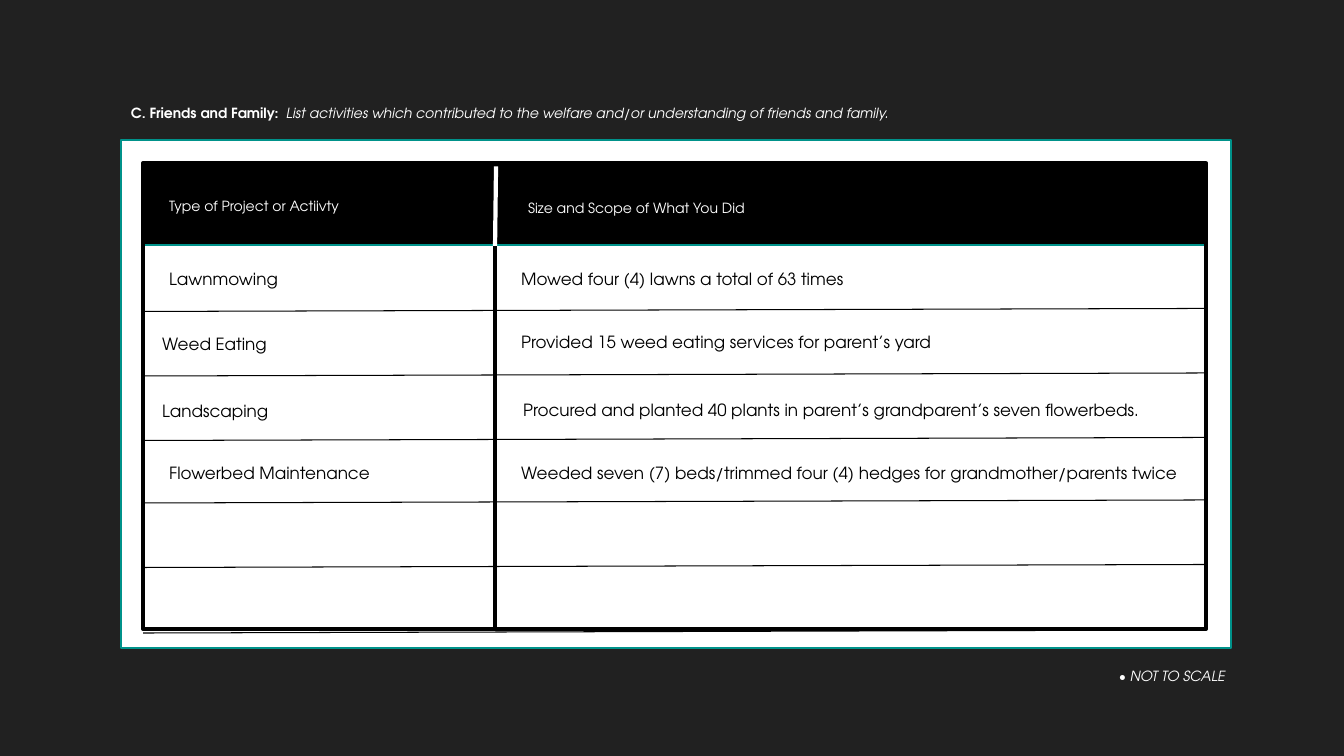
from pptx import Presentation
from pptx.dml.color import RGBColor
from pptx.enum.shapes import MSO_CONNECTOR, MSO_SHAPE
from pptx.oxml.ns import qn
from pptx.util import Inches, Pt
from lxml.etree import SubElement

THEME = {
    "font": "TeX Gyre Adventor",
    "background": "212121", "paper": "FFFFFF", "ink": "000000", "accent": "00928A",
    "small": 10, "body": 12,
    "thin": 0.75, "border": 1.25, "thick": 3,
}

HEADING = [
    ("C. Friends and Family:  ", {"bold": True}),
    ("List activities which contributed to the welfare and/or understanding "
     "of friends and family.", {"italic": True}),
]
FOOTNOTE = [("• NOT TO SCALE", {"italic": True})]

# text, left, top
COLUMN_TITLES = [
    ("Type of Project or Actiivty", 1.58, 1.91),
    ("Size and Scope of What You Did", 5.14, 1.93),
]
# (activity, left, top), (scope, left, top)
ACTIVITIES = [
    (("Lawnmowing", 1.58, 2.62),
     ("Mowed four (4) lawns a total of 63 times", 5.07, 2.62)),
    (("Weed Eating", 1.51, 3.26),
     ("Provided 15 weed eating services for parent’s yard", 5.07, 3.24)),
    (("Landscaping", 1.51, 3.93),
     ("Procured and planted 40 plants in parent’s grandparent’s seven flowerbeds.",
      5.09, 3.92)),
    (("Flowerbed Maintenance", 1.58, 4.54),
     ("Weeded seven (7) beds/trimmed four (4) hedges for grandmother/parents twice",
      5.07, 4.54)),
]
COLUMN_WIDTHS = (3.14, 6.72)

PANEL = (1.2, 1.39, 11.01, 5.04)
GRID_LEFT, GRID_TOP, GRID_WIDTH, GRID_HEIGHT = GRID = (1.42, 1.62, 10.54, 4.62)
HEADER = (GRID_LEFT, GRID_TOP, GRID_WIDTH, 0.81)
ROW_RULES = [3.09, 3.73, 4.37, 4.99, 5.63, 6.28]
RULE_RISE = 0.03
DIVIDER = 4.91


def color(name):
    return RGBColor.from_string(THEME[name])


def add_box(slide, bounds, fill, line, weight):
    shape = slide.shapes.add_shape(MSO_SHAPE.RECTANGLE, *map(Inches, bounds))
    shape.shadow.inherit = False
    if fill:
        shape.fill.solid()
        shape.fill.fore_color.rgb = color(fill)
    else:
        shape.fill.background()
    shape.line.color.rgb = color(line)
    shape.line.width = Pt(THEME[weight])


def add_line(slide, start, end, line, weight):
    connector = slide.shapes.add_connector(
        MSO_CONNECTOR.STRAIGHT, *map(Inches, start + end))
    connector.line.color.rgb = color(line)
    connector.line.width = Pt(THEME[weight])
    SubElement(connector._element.spPr, qn("a:effectLst"))


def add_text(slide, runs, left, top, width, size, ink):
    """Add one line of text; runs pairs each piece with its own font format."""
    height = 0.3 if size == "body" else 0.27
    box = slide.shapes.add_textbox(*map(Inches, (left, top, width, height)))
    box.text_frame.word_wrap = True
    paragraph = box.text_frame.paragraphs[0]
    for text, emphasis in runs:
        run = paragraph.add_run()
        run.text = text
        run.font.color.rgb = color(ink)
        values = {"name": THEME["font"], "size": Pt(THEME[size]), **emphasis}
        for attribute, value in values.items():
            setattr(run.font, attribute, value)


def add_grid(slide):
    add_box(slide, HEADER, "ink", "accent", "border")
    right = GRID_LEFT + GRID_WIDTH
    for rule in ROW_RULES:
        add_line(slide, (GRID_LEFT, rule), (right, rule - RULE_RISE), "ink", "thin")
    add_box(slide, GRID, None, "ink", "thick")
    add_line(slide, (DIVIDER, 2.25), (DIVIDER, 6.25), "ink", "thick")
    add_line(slide, (DIVIDER + 0.01, 1.65), (DIVIDER, 2.44), "paper", "thick")


def main():
    presentation = Presentation()
    presentation.slide_width = Inches(13.33)
    presentation.slide_height = Inches(7.5)
    slide = presentation.slides.add_slide(presentation.slide_layouts[6])
    slide.background.fill.solid()
    slide.background.fill.fore_color.rgb = color("background")

    add_box(slide, PANEL, "paper", "accent", "border")
    add_text(slide, HEADING, 1.2, 0.99, 11.13, "small", "paper")
    add_grid(slide)
    rows = [(COLUMN_TITLES, "small", "paper")]
    rows += [(cells, "body", "ink") for cells in ACTIVITIES]
    for cells, size, ink in rows:
        for (text, left, top), width in zip(cells, COLUMN_WIDTHS):
            add_text(slide, [(text, {})], left, top, width, size, ink)
    add_text(slide, FOOTNOTE, 11, 6.57, 2.2, "small", "paper")

    presentation.save("out.pptx")


if __name__ == "__main__":
    main()
